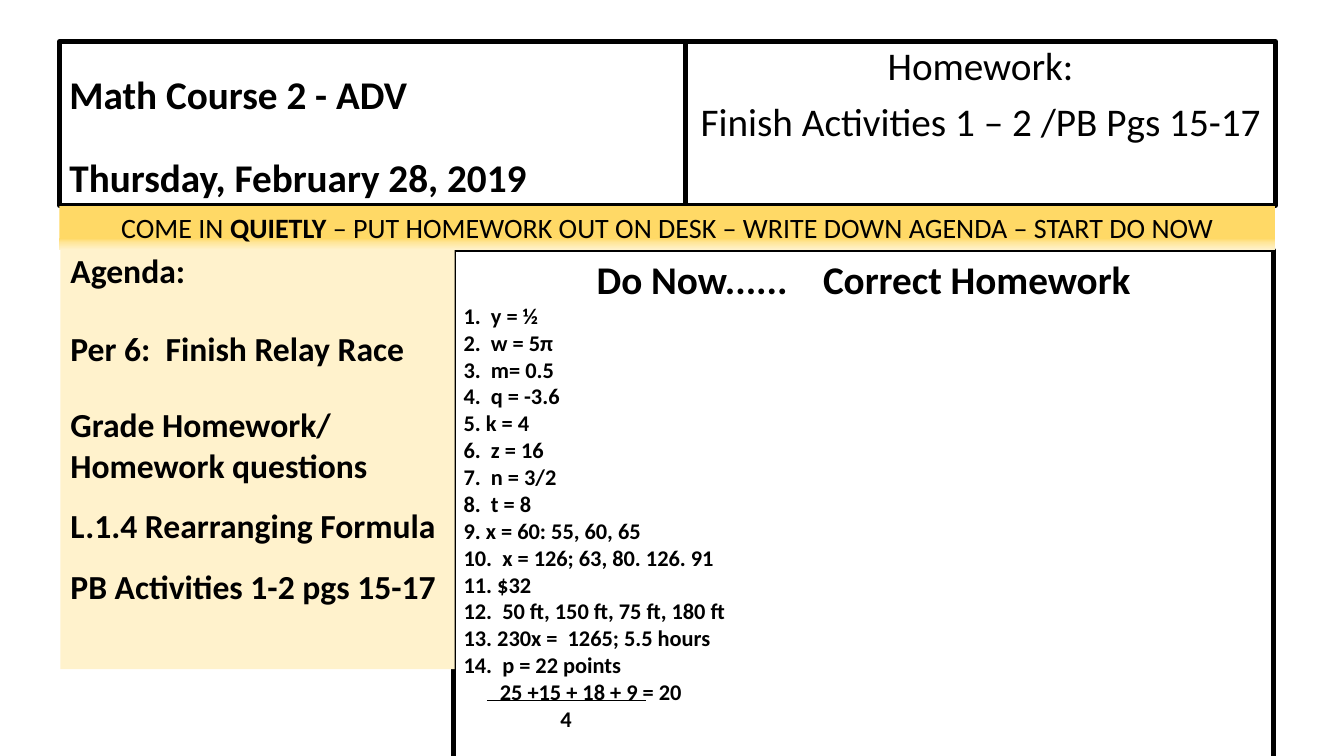
from lxml import etree
from pptx import Presentation
from pptx.dml.color import RGBColor
from pptx.enum.shapes import MSO_CONNECTOR as Connector, MSO_SHAPE as Shape
from pptx.enum.text import MSO_ANCHOR as Anchor, PP_ALIGN as Align
from pptx.oxml import parse_xml
from pptx.oxml.ns import nsdecls, qn
from pptx.util import Inches, Pt

# Content: each paragraph is (runs, format); each run is (text, bold)
COURSE = [
    ([("Math Course 2 - ADV", True)], {"line_spacing": 0.9}),
    ([("Thursday, February 28, 2019", True)],
     {"line_spacing": 0.9, "space_before": Pt(29)}),
]
HOMEWORK = [
    ([(text, False)],
     {"alignment": Align.CENTER, "line_spacing": 0.9, "space_before": Pt(10)})
    for text in ("Homework:", "Finish Activities 1 – 2 /PB Pgs 15-17")
]
BANNER = [
    ([("COME IN ", False), ("QUIETLY", True),
      (" – PUT HOMEWORK OUT ON DESK – WRITE DOWN AGENDA – START DO NOW", False)],
     {"alignment": Align.CENTER}),
]
AGENDA = [
    ([("Agenda:", True)], {"line_spacing": 0.9}),
    ([("Per 6:  Finish Relay Race", True)], {"space_before": Pt(26)}),
    ([("Grade Homework/ Homework questions", True)], {"space_before": Pt(26)}),
    ([("L.1.4 Rearranging Formula", True)], {"line_spacing": 1.5}),
    ([("PB Activities 1-2 pgs 15-17", True)], {"line_spacing": 1.5}),
]
ANSWERS = [
    "1.  y = ½", "2.  w = 5π", "3.  m= 0.5", "4.  q = -3.6", "5. k = 4",
    "6.  z = 16", "7.  n = 3/2", "8.  t = 8", "9. x = 60: 55, 60, 65",
    "10.  x = 126; 63, 80. 126. 91", "11. $32",
    "12.  50 ft, 150 ft, 75 ft, 180 ft", "13. 230x =  1265; 5.5 hours",
    "14.  p = 22 points",
]
FRACTION = [("25 +15 + 18 + 9 = 20", 0.36), ("4", 0.96)]  # text, indent
DO_NOW = [
    ([("Do Now......    Correct Homework", True)],
     {"alignment": Align.CENTER, "font_size": 28}),
    *[([(text, True)], {}) for text in ANSWERS],
    *[([(text, True)], {"indent": indent}) for text, indent in FRACTION],
]

BLACK, CREAM = "000000", "FFF2CC"
BANNER_STOPS = [(0, "FFD966"), (74, "FFD966"), (83, "FFE699"), (100, CREAM)]

# Grid edges, in inches
LEFT, RIGHT, HEADER_SPLIT, BODY_SPLIT = 0.59, 12.65, 6.8, 4.5
TOP, BANNER_TOP, BODY_TOP = 0.41, 2.04, 2.48
AGENDA_BOTTOM, DO_NOW_BOTTOM = 6.64, 7.62
FRACTION_LEFT, FRACTION_RIGHT, FRACTION_Y = 4.83, 6.41, 6.95

# left, top, right, bottom, paragraphs, size, anchor, outlined, fill
PANELS = [
    (LEFT, TOP, HEADER_SPLIT, BANNER_TOP, COURSE, 28, Anchor.BOTTOM, True, None),
    (HEADER_SPLIT, TOP, RIGHT, BANNER_TOP, HOMEWORK, 28, Anchor.TOP, True, None),
    (BODY_SPLIT, BODY_TOP, RIGHT - 0.02, DO_NOW_BOTTOM, DO_NOW, 16, Anchor.TOP,
     True, None),
    (LEFT, BANNER_TOP, RIGHT, BODY_TOP, BANNER, 20, Anchor.TOP, False,
     BANNER_STOPS),
    (LEFT + 0.01, BODY_TOP, BODY_SPLIT + 0.01, AGENDA_BOTTOM, AGENDA, 24,
     Anchor.TOP, False, CREAM),
]


def color(value):
    return RGBColor.from_string(value)


def fill_gradient(shape, stops):
    """Fill the shape with colour stops running from top to bottom."""
    shape.fill.background()
    stop_xml = "".join(
        f'<a:gs pos="{share * 1000}"><a:srgbClr val="{value}"/></a:gs>'
        for share, value in stops)
    gradient = parse_xml(
        f'<a:gradFill {nsdecls("a")} rotWithShape="1"><a:gsLst>{stop_xml}</a:gsLst>'
        '<a:lin ang="5400000" scaled="0"/></a:gradFill>')
    properties = shape._element.spPr
    properties.replace(properties.find(qn("a:noFill")), gradient)


def write_paragraph(paragraph, runs, formats, size):
    formats = {"alignment": Align.LEFT, **formats}
    size = formats.pop("font_size", size)
    indent = formats.pop("indent", None)
    for name, value in formats.items():
        setattr(paragraph, name, value)
    if indent:
        properties = paragraph._p.get_or_add_pPr()
        properties.set("marL", str(Inches(indent)))
        properties.set("indent", "0")
    for text, bold in runs:
        run = paragraph.add_run()
        run.text = text
        for name, value in {"name": "Calibri", "size": Pt(size),
                            "bold": bold}.items():
            setattr(run.font, name, value)
        run.font.color.rgb = color(BLACK)


def add_panel(slide, left, top, right, bottom, paragraphs, size, anchor,
              outlined, fill):
    shape = slide.shapes.add_shape(
        Shape.RECTANGLE, Inches(left), Inches(top),
        Inches(right - left), Inches(bottom - top))
    shape.shadow.inherit = False
    if isinstance(fill, list):
        fill_gradient(shape, fill)
    elif fill:
        shape.fill.solid()
        shape.fill.fore_color.rgb = color(fill)
    else:
        shape.fill.background()
    if outlined:
        shape.line.color.rgb = color(BLACK)
        shape.line.width = Pt(3.25)
    else:
        shape.line.fill.background()
    frame = shape.text_frame
    frame.word_wrap = True
    frame.vertical_anchor = anchor
    for index, (runs, formats) in enumerate(paragraphs):
        paragraph = frame.add_paragraph() if index else frame.paragraphs[0]
        write_paragraph(paragraph, runs, formats, size)


def main():
    presentation = Presentation()
    presentation.slide_width = Inches(13.33)
    presentation.slide_height = Inches(7.5)
    slide = presentation.slides.add_slide(presentation.slide_layouts[6])

    # Header, work area, banner and agenda
    for panel in PANELS:
        add_panel(slide, *panel)

    # Fraction bar
    bar = slide.shapes.add_connector(
        Connector.STRAIGHT, Inches(FRACTION_LEFT), Inches(FRACTION_Y),
        Inches(FRACTION_RIGHT), Inches(FRACTION_Y))
    bar.line.color.rgb = color(BLACK)
    bar.line.width = Pt(0.5)
    etree.SubElement(bar._element.spPr, qn("a:effectLst"))

    presentation.save("out.pptx")


if __name__ == "__main__":
    main()
